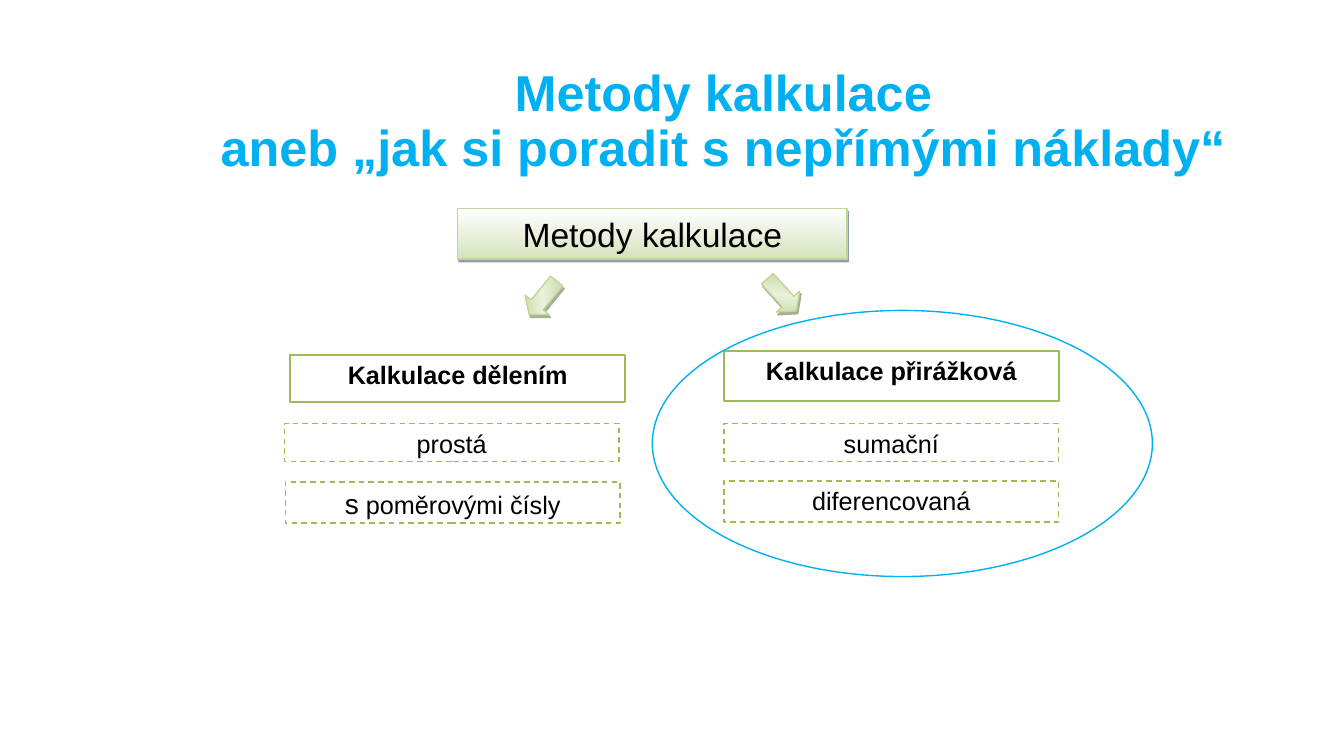
from lxml.etree import SubElement
from pptx import Presentation
from pptx.dml.color import RGBColor
from pptx.enum.dml import MSO_LINE
from pptx.enum.shapes import MSO_SHAPE
from pptx.enum.text import MSO_ANCHOR, PP_ALIGN
from pptx.oxml.ns import qn
from pptx.util import Inches, Pt

BLUE, BLACK, WHITE = "00B0F0", "000000", "FFFFFF"
GREEN, PALE_GREEN = "9BBB59", "C2D69B"


def color(value):
    """Return the colour for a hex string."""
    return RGBColor.from_string(value)


def format_run(run, size, fill=BLACK, bold=False):
    """Set the font of a run."""
    run.font.name = "Arial"
    run.font.size = Pt(size)
    run.font.bold = bold
    run.font.color.rgb = color(fill)


def add_title(slide, text):
    """Place and format the title placeholder."""
    title = slide.shapes.title
    title.left, title.top = Inches(1.99), Inches(0.59)
    title.width, title.height = Inches(10.37), Inches(1.25)
    frame = title.text_frame
    frame.text = text
    frame.word_wrap = True
    frame.vertical_anchor = MSO_ANCHOR.MIDDLE
    paragraph = frame.paragraphs[0]
    paragraph.alignment = PP_ALIGN.CENTER
    paragraph.line_spacing = 0.9
    for run in paragraph.runs:
        format_run(run, 36, BLUE, True)


def add_outlined(shapes, kind, left, top, width, height, line, weight=1):
    """Add an unfilled preset shape with a coloured outline."""
    shape = shapes.add_shape(kind, Inches(left), Inches(top), Inches(width), Inches(height))
    shape.shadow.inherit = False
    shape.fill.background()
    shape.line.color.rgb = color(line)
    shape.line.width = Pt(weight)
    return shape


def set_gradient(shape, stops, angle):
    """Fill a shape with evenly spaced gradient stops."""
    shape.fill.gradient()
    shape.fill.gradient_angle = angle
    stop_list = shape.element.spPr.find(qn("a:gradFill")).find(qn("a:gsLst"))
    for stop in list(stop_list):
        stop_list.remove(stop)
    for index, value in enumerate(stops):
        position = 100000 * index // (len(stops) - 1)
        stop = SubElement(stop_list, qn("a:gs"), pos=str(position))
        SubElement(stop, qn("a:srgbClr"), val=value)


def set_shadow(shape, value):
    """Give a shape a hard, half-transparent shadow."""
    effects = shape.element.spPr.find(qn("a:effectLst"))
    shadow = SubElement(effects, qn("a:outerShdw"), dist=str(Pt(2.2)),
                        dir=str(63 * 60000), algn="ctr", rotWithShape="0")
    shadow_color = SubElement(shadow, qn("a:srgbClr"), val=value)
    SubElement(shadow_color, qn("a:alpha"), val="50000")


def set_label(shape, parts, bold=False):
    """Write centred text given as (text, size) parts."""
    frame = shape.text_frame
    frame.word_wrap = True
    frame.vertical_anchor = MSO_ANCHOR.TOP
    paragraph = frame.paragraphs[0]
    paragraph.alignment = PP_ALIGN.CENTER
    for text, size in parts:
        run = paragraph.add_run()
        run.text = text
        format_run(run, size, bold=bold)


def add_root(shapes):
    """Add the shaded box at the top of the tree."""
    box = add_outlined(shapes, MSO_SHAPE.RECTANGLE, 4.54, 2.07, 3.86, 0.5, PALE_GREEN)
    set_gradient(box, [WHITE, "D6E3BC"], 270)
    set_shadow(box, "243F60")
    set_label(box, [("Metody kalkulace", 24)])


def add_block_arrow(shapes, left, top, rotation):
    """Add a rotated block arrow."""
    arrow = add_outlined(shapes, MSO_SHAPE.DOWN_ARROW, left, top, 0.31, 0.43, PALE_GREEN)
    arrow.adjustments[0], arrow.adjustments[1] = 0.5, 0.4
    arrow.rotation = rotation
    set_gradient(arrow, [PALE_GREEN, "EAF1DD", PALE_GREEN], 45)
    set_shadow(arrow, "4E6128")


def add_method(shapes, left, top, height, parts, heading=False):
    """Add a solid heading box or a dashed variant box."""
    box = add_outlined(shapes, MSO_SHAPE.RECTANGLE, left, top, 3.32, height,
                       GREEN, 1.25 if heading else 1)
    box.fill.solid()
    box.fill.fore_color.rgb = color(WHITE)
    if not heading:
        box.line.dash_style = MSO_LINE.DASH
    set_label(box, parts, bold=heading)


def main():
    """Build the slide and save it."""
    presentation = Presentation()
    presentation.slide_width, presentation.slide_height = Inches(13.33), Inches(7.5)
    slide = presentation.slides.add_slide(presentation.slide_layouts[5])
    add_title(slide, "Metody kalkulace\vaneb „jak si poradit s nepřímými náklady“")

    root = slide.shapes.add_group_shape().shapes
    add_root(root)
    add_block_arrow(root, 5.23, 2.74, 39.2)
    add_block_arrow(root, 7.6, 2.71, 318)

    surcharge = slide.shapes.add_group_shape().shapes
    add_method(surcharge, 7.18, 3.48, 0.5, [("Kalkulace přirážková", 18)], heading=True)
    add_method(surcharge, 7.18, 4.2, 0.38, [("sumační", 18)])
    add_method(surcharge, 7.18, 4.77, 0.41, [("diferencovaná", 18)])

    division = slide.shapes.add_group_shape().shapes
    add_method(division, 2.88, 3.52, 0.47, [("Kalkulace dělením", 18)], heading=True)
    add_method(division, 2.82, 4.2, 0.38, [("prostá", 18)])
    add_method(division, 2.83, 4.78, 0.41, [("s", 20), (" poměrovými čísly", 18)])

    add_outlined(slide.shapes, MSO_SHAPE.OVAL, 6.47, 3.08, 4.96, 2.64, BLUE)
    presentation.save("out.pptx")


if __name__ == "__main__":
    main()
